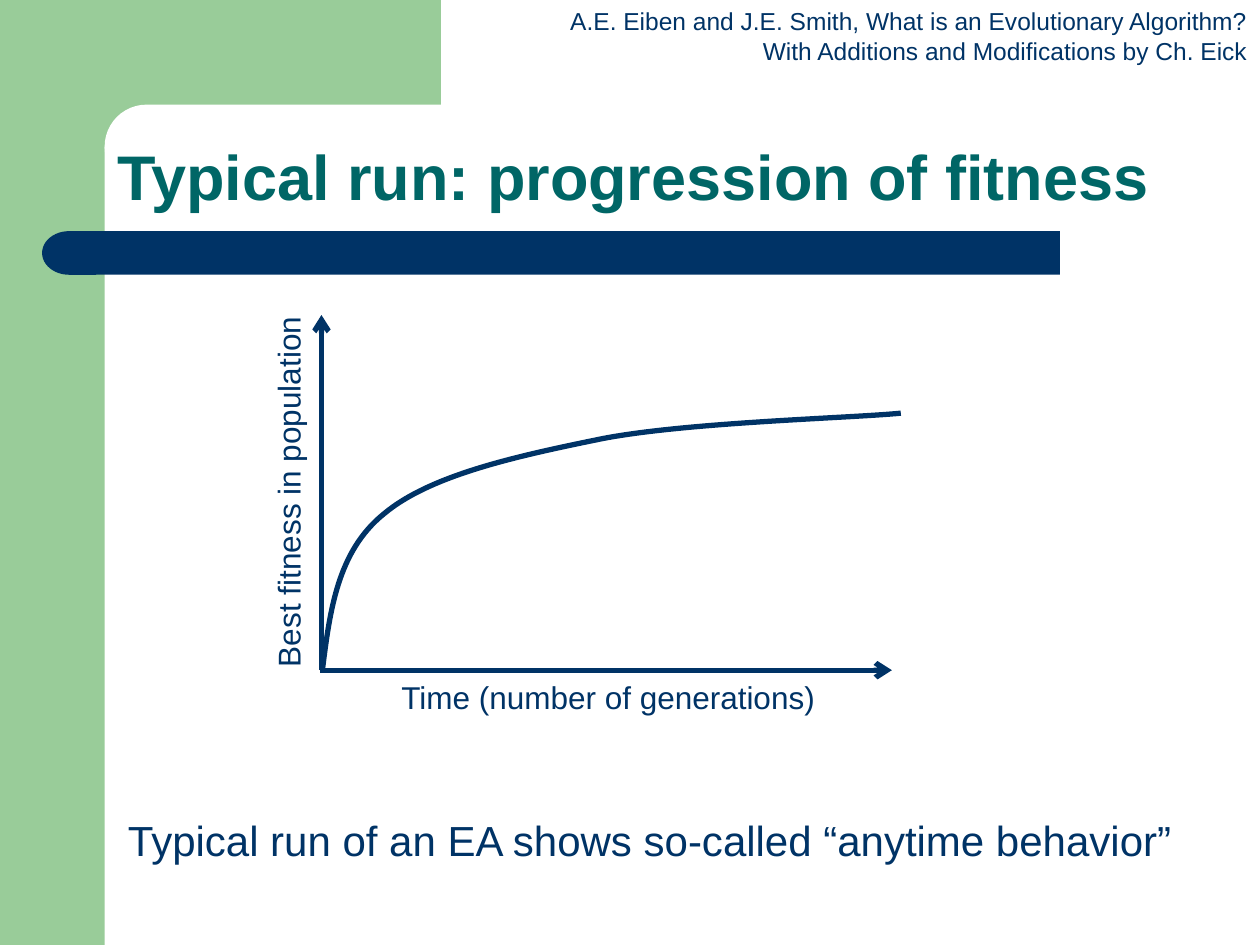
from pptx import Presentation
from pptx.dml.color import RGBColor
from pptx.enum.shapes import MSO_CONNECTOR, MSO_SHAPE
from pptx.enum.text import MSO_ANCHOR, PP_ALIGN
from pptx.oxml.ns import qn
from pptx.util import Cm, Pt
from lxml import etree

RECT, ROUNDED = MSO_SHAPE.RECTANGLE, MSO_SHAPE.ROUNDED_RECTANGLE
DELAY = MSO_SHAPE.FLOWCHART_DELAY
STRAIGHT = MSO_CONNECTOR.STRAIGHT
LEFT, RIGHT = PP_ALIGN.LEFT, PP_ALIGN.RIGHT
BOTTOM = MSO_ANCHOR.BOTTOM

FONT = "Arial"
NAVY, TEAL, GREEN, WHITE = "003366", "006666", "99CC99", "FFFFFF"
SLIDE_W, SLIDE_H = 25.4, 19.05

# Start, then three points for each Bézier segment, in cm right of and above the origin
FITNESS_CURVE = [
    (0, 0),
    (0.15, 1.19), (0.3, 2.39), (1.24, 3.15),
    (2.18, 3.94), (3.94, 4.32), (5.66, 4.67),
    (7.39, 5), (10.64, 5.08), (11.66, 5.18),
]


def color(hex_code):
    return RGBColor.from_string(hex_code)


def add_block(slide, preset, left, top, width, height, fill):
    block = slide.shapes.add_shape(preset, Cm(left), Cm(top), Cm(width), Cm(height))
    block.shadow.inherit = False
    block.fill.solid()
    block.fill.fore_color.rgb = color(fill)
    block.line.fill.background()
    return block


def style_paragraph(paragraph, size, hex_code, align=LEFT, bold=False):
    paragraph.alignment = align
    font = paragraph.font
    font.name, font.size, font.bold = FONT, Pt(size), bold
    font.color.rgb = color(hex_code)


def add_text(slide, lines, left, top, width, height, size, align=LEFT, wrap=True):
    box = slide.shapes.add_textbox(Cm(left), Cm(top), Cm(width), Cm(height))
    box.text_frame.word_wrap = wrap
    box.text_frame.text = "\n".join(lines)
    for paragraph in box.text_frame.paragraphs:
        style_paragraph(paragraph, size, NAVY, align)
    return box


def style_line(line):
    line.color.rgb = color(NAVY)
    line.width = Pt(3)


def add_axis(slide, x1, y1, x2, y2):
    axis = slide.shapes.add_connector(STRAIGHT, Cm(x1), Cm(y1), Cm(x2), Cm(y2))
    style_line(axis.line)
    etree.SubElement(axis.line._get_or_add_ln(), qn("a:tailEnd"), type="arrow")
    etree.SubElement(axis._element.spPr, qn("a:effectLst"))


def add_curve(slide, points):
    """Draw a cubic Bézier curve through points given in cm."""
    start, *rest = [(Cm(x), Cm(y)) for x, y in points]
    builder = slide.shapes.build_freeform(*start)
    builder.add_line_segments(rest, close=False)
    curve = builder.convert_to_shape()
    curve.shadow.inherit = False
    curve.fill.background()
    style_line(curve.line)

    segments = list(curve._element.iter(qn("a:lnTo")))
    outline = segments[0].getparent()
    for first in range(0, len(segments), 3):
        bezier = etree.SubElement(outline, qn("a:cubicBezTo"))
        for segment in segments[first:first + 3]:
            bezier.append(segment[0])
            outline.remove(segment)


def add_frame(slide, left, top, width, height):
    """Green corner with a rounded white inset, and the navy bar under the title."""
    band = 2.11
    add_block(slide, RECT, left, top, band, height, GREEN)
    add_block(slide, RECT, left + 1.9, top, 6.99, 2.96, GREEN)
    inset = add_block(slide, ROUNDED, left + band, top + band, 14.18, 1.69, WHITE)
    inset.adjustments[0] = 0.5

    bar_top, bar_height = top + 4.66, 0.88
    add_block(slide, RECT, left + 1.9, bar_top, width - 5.93, bar_height, NAVY)
    cap = add_block(slide, DELAY, left + 0.85, bar_top, 1.09, bar_height, NAVY)
    cap._element.spPr.xfrm.set("flipH", "1")


def set_title(slide, words, left, top, width, height):
    """Fill the title placeholder and bring it in front of the frame."""
    title = slide.shapes.title
    slide.shapes._spTree.append(title._element)
    title.left, title.top = Cm(left), Cm(top)
    title.width, title.height = Cm(width), Cm(height)
    title.text_frame.text = words
    title.text_frame.vertical_anchor = BOTTOM
    paragraph = title.text_frame.paragraphs[0]
    paragraph.line_spacing = 0.9
    style_paragraph(paragraph, 36, TEAL, bold=True)


def add_fitness_plot(slide, left, top, width, height):
    """Axes with arrows, their labels and the fitness curve."""
    origin_x, origin_y = left + 1.18, top + height - 1.05
    time_label_w, fitness_label_w, label_h = 8.86, 7.57, 1.02

    fitness_label = add_text(
        slide, ["Best fitness in population"],
        left + label_h / 2 - fitness_label_w / 2, top + 3.56 - label_h / 2,
        fitness_label_w, label_h, 18, wrap=False)
    fitness_label.rotation = 270
    add_text(slide, ["Time (number of generations)"],
             origin_x + 1.36, top + height - label_h,
             time_label_w, label_h, 18, wrap=False)

    add_axis(slide, origin_x - 0.03, origin_y, left + width, origin_y)
    add_axis(slide, origin_x, origin_y, origin_x, top)
    add_curve(slide, [(origin_x + 0.02 + x, origin_y - y) for x, y in FITNESS_CURVE])


def main():
    prs = Presentation()
    prs.slide_width, prs.slide_height = Cm(SLIDE_W), Cm(SLIDE_H)
    slide = prs.slides.add_slide(prs.slide_layouts[5])

    add_frame(slide, 0, 0, SLIDE_W, SLIDE_H)
    add_text(slide,
             ["A.E. Eiben and J.E. Smith, What is an Evolutionary Algorithm?",
              "With Additions and Modifications by Ch. Eick"],
             10.8, 0, 14.6, 1.45, 14, RIGHT)
    set_title(slide, "Typical run: progression of fitness", 2.12, 2.54, 21.59, 1.9)
    add_fitness_plot(slide, 5.3, 6.35, 12.68, 8.21)
    add_text(slide, ["Typical run of an EA shows so-called “anytime behavior”"],
             2.33, 16.3, 22.02, 1.27, 24)

    prs.save("out.pptx")


if __name__ == "__main__":
    main()
